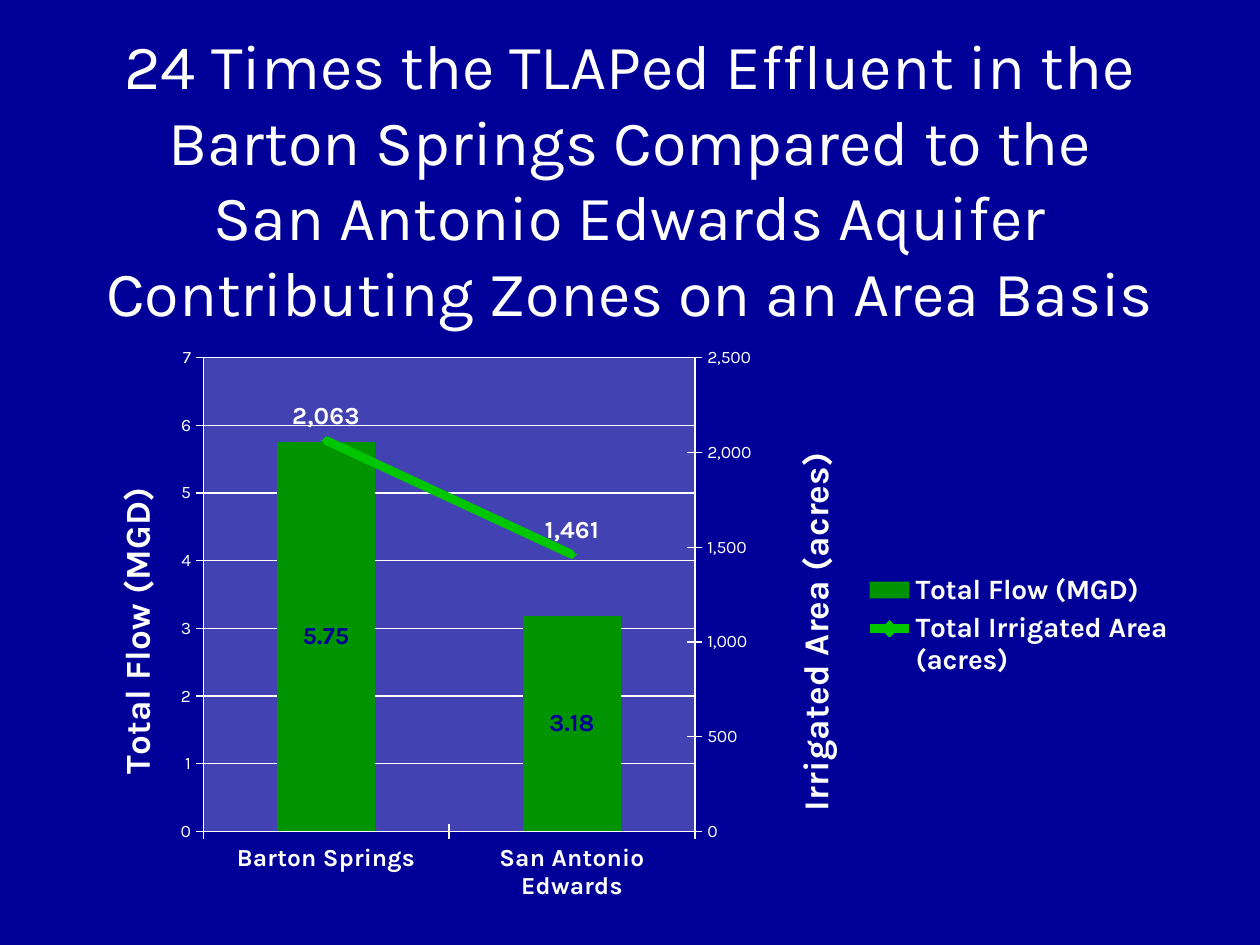
from copy import deepcopy

from pptx import Presentation
from pptx.chart.axis import ValueAxis
from pptx.chart.data import CategoryChartData
from pptx.dml.color import RGBColor
from pptx.enum.chart import (
    XL_CHART_TYPE, XL_LABEL_POSITION as LABEL_AT, XL_LEGEND_POSITION as LEGEND_AT,
    XL_MARKER_STYLE as MARKER, XL_TICK_MARK as TICK)
from pptx.enum.text import MSO_ANCHOR, PP_ALIGN
from pptx.oxml import parse_xml
from pptx.oxml.ns import nsdecls
from pptx.util import Inches, Pt

COLORS = {"back": "000099", "text": "FFFFFF", "flow": "009400", "area": "00C600"}
FONT = "Karla"
FLOW, AREA = "Total Flow (MGD)", "Total Irrigated Area (acres)"
TITLE_LINES = [
    "24 Times the TLAPed Effluent in the Barton Springs Compared to the",
    "San Antonio Edwards Aquifer Contributing Zones on an Area Basis",
]


def color(name):
    return RGBColor.from_string(COLORS[name])


def set_font(font, size, bold=False, fill="text"):
    for key, value in {"name": FONT, "size": Pt(size), "bold": bold}.items():
        setattr(font, key, value)
    font.color.rgb = color(fill)


def add_title(page, box):
    frame = page.shapes.add_textbox(*map(Inches, box)).text_frame
    frame.word_wrap = True
    frame.vertical_anchor = MSO_ANCHOR.MIDDLE
    para = frame.paragraphs[0]
    para.alignment = PP_ALIGN.CENTER
    for index, line in enumerate(TITLE_LINES):
        if index:
            para.add_line_break()
        span = para.add_run()
        span.text = line
        set_font(span.font, 36)


def set_layout(element, index, **fractions):
    """Place a chart part by fractions of the chart, as child number index."""
    for old in element.xpath("c:layout"):
        element.remove(old)
    target = '<c:layoutTarget val="inner"/>' if index == 0 else ""
    modes = "".join(f'<c:{key}Mode val="edge"/>' for key in fractions if key in "xy")
    sizes = "".join(f'<c:{key} val="{value}"/>' for key, value in fractions.items())
    element.insert(index, parse_xml(
        f'<c:layout {nsdecls("c")}><c:manualLayout>{target}{modes}{sizes}'
        "</c:manualLayout></c:layout>"))


def move_to_right_axis(plot_area):
    """Turn the second column series into a line on a second pair of axes."""
    bars = plot_area.xpath("c:barChart")[0]
    series = bars.xpath("c:ser")[1]
    for item in series.xpath("c:invertIfNegative"):
        series.remove(item)
    line = parse_xml(
        f'<c:lineChart {nsdecls("c")}><c:grouping val="standard"/>'
        '<c:varyColors val="0"/><c:marker val="1"/>'
        '<c:axId val="501"/><c:axId val="502"/></c:lineChart>')
    line.insert(2, series)
    bars.addnext(line)

    left = plot_area.xpath("c:valAx")[0]
    category, right = deepcopy(plot_area.xpath("c:catAx")[0]), deepcopy(left)
    left.addnext(right)
    right.addnext(category)
    for axis, own, other in ((category, "501", "502"), (right, "502", "501")):
        axis.xpath("c:axId")[0].set("val", own)
        axis.xpath("c:crossAx")[0].set("val", other)
    category.xpath("c:delete")[0].set("val", "1")
    right.xpath("c:axPos")[0].set("val", "r")
    right.xpath("c:crosses")[0].set("val", "max")
    return ValueAxis(right)


def style_line(line, width=0.75, fill="text"):
    line.width = Pt(width)
    line.color.rgb = color(fill)


def style_value_axis(axis, element, title, top, step, number_format, place):
    axis.minimum_scale, axis.maximum_scale, axis.major_unit = 0, top, step
    axis.tick_labels.number_format = number_format
    axis.tick_labels.number_format_is_linked = False
    set_font(axis.tick_labels.font, 10)
    frame = axis.axis_title.text_frame
    frame.text = title
    set_font(frame.paragraphs[0].runs[0].font, 20, True)
    body = element.xpath("c:title//a:bodyPr")[0]
    body.set("rot", "-5400000")
    body.set("vert", "horz")
    set_layout(element.xpath("c:title")[0], 1, **place)


def style_labels(plot, position, number_format, fill):
    plot.has_data_labels = True
    labels = plot.data_labels
    labels.show_value = True
    labels.position = position
    labels.number_format = number_format
    labels.number_format_is_linked = False
    set_font(labels.font, 14, True, fill)


def style_series(bar_plot, line_plot):
    bar_plot.gap_width = 150
    bar_plot.vary_by_categories = False
    flow, area = bar_plot.series[0], line_plot.series[0]
    flow.format.fill.solid()
    flow.format.fill.fore_color.rgb = color("flow")
    style_line(area.format.line, 5, "area")
    area.smooth = False
    area.marker.style = MARKER.DIAMOND
    area.marker.size = 5
    area.marker.format.fill.solid()
    area.marker.format.fill.fore_color.rgb = color("area")
    style_line(area.marker.format.line, 0.75, "area")
    style_labels(bar_plot, LABEL_AT.CENTER, "0.00", "back")
    style_labels(line_plot, LABEL_AT.ABOVE, "#,##0", "text")


def add_flow_chart(page, box):
    data = CategoryChartData()
    data.categories = ["Barton Springs", "San Antonio Edwards"]
    data.add_series(FLOW, [5.75, 3.18])
    data.add_series(AREA, [2063, 1461])
    chart = page.shapes.add_chart(
        XL_CHART_TYPE.COLUMN_CLUSTERED, *map(Inches, box), data).chart
    chart.has_title = False
    set_font(chart.font, 10)
    plot_area = chart.element.xpath("c:chart/c:plotArea")[0]

    left, category = chart.value_axis, chart.category_axis
    right = move_to_right_axis(plot_area)
    for axis in (left, category, right):
        axis.major_tick_mark = TICK.CROSS
        axis.minor_tick_mark = TICK.NONE
        style_line(axis.format.line)
    left.has_major_gridlines = True
    style_line(left.major_gridlines.format.line)
    right.has_major_gridlines = False
    set_font(category.tick_labels.font, 14, True)
    left_element, right_element = plot_area.xpath("c:valAx")
    style_value_axis(left, left_element, FLOW, 7, 1, "0", {"x": 0.03, "y": 0.25})
    style_value_axis(right, right_element, "Irrigated Area (acres)", 2500, 500,
                     "#,##0", {"x": 0.64, "y": 0.19})
    style_series(*chart.plots)

    chart.has_legend = True
    chart.legend.position = LEGEND_AT.RIGHT
    chart.legend.include_in_layout = False
    set_font(chart.legend.font, 16, True)
    set_layout(chart.element.xpath("c:chart/c:legend")[0], 1, x=0.71, y=0.4, w=0.28, h=0.2)
    set_layout(plot_area, 0, x=0.117, y=0.037, w=0.442, h=0.821)
    plot_area.append(parse_xml(
        f'<c:spPr {nsdecls("c", "a")}><a:solidFill><a:srgbClr val="{COLORS["text"]}">'
        '<a:alpha val="26000"/></a:srgbClr></a:solidFill></c:spPr>'))


def main():
    deck = Presentation()
    deck.slide_width, deck.slide_height = Inches(10), Inches(7.5)
    page = deck.slides.add_slide(deck.slide_layouts[6])
    page.background.fill.solid()
    page.background.fill.fore_color.rgb = color("back")
    add_flow_chart(page, (0.58, 2.67, 8.83, 4.58))
    add_title(page, (0.5, 0.32, 9, 2.18))
    deck.save("out.pptx")


if __name__ == "__main__":
    main()
